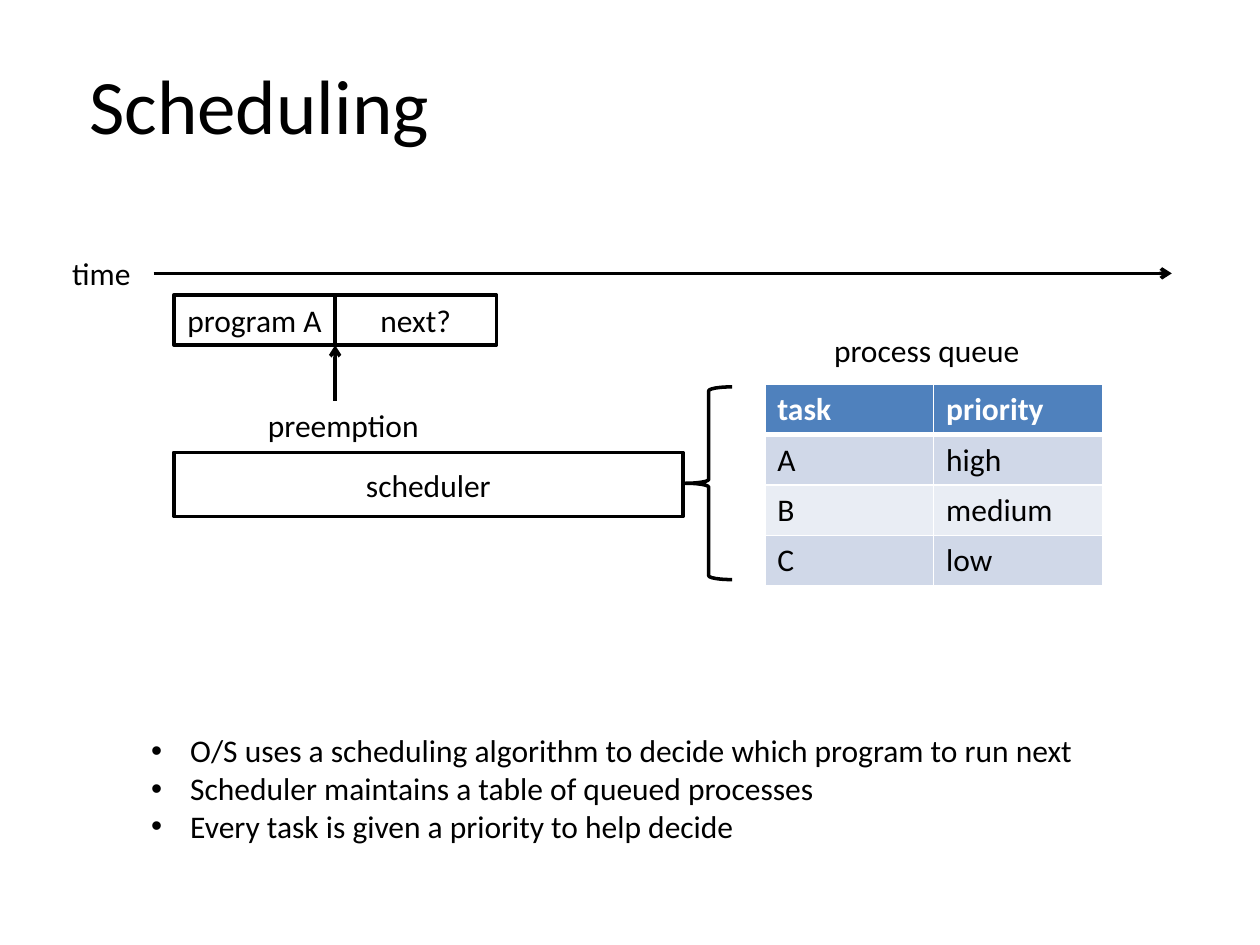
import lxml.etree
import pptx
import pptx.dml.color
import pptx.enum.shapes
import pptx.enum.text
import pptx.oxml.ns
import pptx.util

presentation = pptx.Presentation()
presentation.slide_width = pptx.util.Inches(10)
presentation.slide_height = pptx.util.Inches(7.5)
slide = presentation.slides.add_slide(presentation.slide_layouts[1])
shapes = slide.shapes
qn = pptx.oxml.ns.qn
SHAPE = pptx.enum.shapes.MSO_SHAPE
ALIGN = pptx.enum.text.PP_ALIGN
MIDDLE = pptx.enum.text.MSO_ANCHOR.MIDDLE
CELL = presentation.slide_width // 100  # the slide is 100 columns by 75 rows


def grid(*counts):
    """Turn counts of grid columns or rows into lengths."""
    return [round(count * CELL) for count in counts]


def write(frame, text, size=18, color="000000", align=ALIGN.LEFT, bold=False):
    frame.text = text
    frame.vertical_anchor = MIDDLE
    for paragraph in frame.paragraphs:
        paragraph.alignment = align
        paragraph.space_before = pptx.util.Pt(0)
        for run in paragraph.runs:
            run.font.name = "Calibri"
            run.font.size = pptx.util.Pt(size)
            run.font.bold = bold
            run.font.color.rgb = pptx.dml.color.RGBColor.from_string(color)


# Title and notes
title, notes = shapes.title, slide.placeholders[1]
title.left, title.top, title.width, title.height = grid(6.1, 4, 60, 8.4)
write(title.text_frame, "Scheduling", size=44)
notes.left, notes.top, notes.width, notes.height = grid(11, 57.5, 80, 10.1)
write(notes.text_frame, "\n".join([
    "O/S uses a scheduling algorithm to decide which program to run next",
    "Scheduler maintains a table of queued processes",
    "Every task is given a priority to help decide",
]))
for placeholder in (title, notes):
    placeholder.text_frame.auto_size = pptx.enum.text.MSO_AUTO_SIZE.NONE
for paragraph in notes.text_frame.paragraphs:
    properties = paragraph._p.get_or_add_pPr()
    indent = grid(3.1)[0]
    properties.set("marL", str(indent))
    properties.set("indent", str(-indent))

# Program boxes, scheduler and brace
BOX_LEFT, BOX_TOP, BOX_WIDTH, BOX_HEIGHT = 13.8, 23.4, 12.8, 4
SWITCH = BOX_LEFT + BOX_WIDTH  # where program A is preempted
for kind, text, *place in [
    (SHAPE.RECTANGLE, "program A", BOX_LEFT, BOX_TOP, BOX_WIDTH, BOX_HEIGHT),
    (SHAPE.RECTANGLE, "next?", SWITCH, BOX_TOP, BOX_WIDTH, BOX_HEIGHT),
    (SHAPE.RECTANGLE, "scheduler", BOX_LEFT, 35.9, 40.4, 5.1),
    (SHAPE.RIGHT_BRACE, "", 54.4, 30.7, 3.7, 15.3),
]:
    shape = shapes.add_shape(kind, *grid(*place))
    shape.shadow.inherit = False
    shape.fill.background()
    shape.line.color.rgb = pptx.dml.color.RGBColor.from_string("000000")
    shape.line.width = pptx.util.Pt(2)
    if kind == SHAPE.RIGHT_BRACE:
        shape.rotation = 180
    else:
        shape.text_frame.word_wrap = False
        write(shape.text_frame, text, align=ALIGN.CENTER)

# Labels
for text, *place in [
    ("time", 4.7, 19.7, 6.7, 4),
    ("preemption", 20.2, 31.7, 14.1, 4),
    ("process queue", 65.1, 25.8, 16.9, 4),
]:
    label = shapes.add_textbox(*grid(*place))
    label.text_frame.word_wrap = False
    write(label.text_frame, text, align=ALIGN.CENTER)

# Time axis and preemption arrow
for ends in [
    (12.2, 21.7, 93, 21.7),
    (SWITCH, 31.8, SWITCH, BOX_TOP + BOX_HEIGHT),
]:
    arrow = shapes.add_connector(
        pptx.enum.shapes.MSO_CONNECTOR.STRAIGHT, *grid(*ends))
    arrow.line.color.rgb = pptx.dml.color.RGBColor.from_string("000000")
    arrow.line.width = pptx.util.Pt(2)
    lxml.etree.SubElement(arrow.line._ln, qn("a:tailEnd"), type="arrow")
    lxml.etree.SubElement(arrow._element.spPr, qn("a:effectLst"))

# Process queue
rows = [("task", "priority"), ("A", "high"), ("B", "medium"), ("C", "low")]
table = shapes.add_table(len(rows), 2, *grid(60.7, 30.5, 26.8, 16)).table
for row_index, row in enumerate(rows):
    header = row_index == 0
    fill = "4F81BD" if header else ("E9EDF4", "D0D8E8")[row_index % 2]
    for column_index, text in enumerate(row):
        cell = table.cell(row_index, column_index)
        write(cell.text_frame, text, bold=header,
              color="FFFFFF" if header else "000000")
        properties = cell._tc.get_or_add_tcPr()
        for side in ("lnL", "lnR", "lnT", "lnB"):
            thick = (side, row_index) in [("lnB", 0), ("lnT", 1)]
            border = lxml.etree.SubElement(
                properties, qn("a:" + side),
                w=str(pptx.util.Pt(3 if thick else 1)))
            solid = lxml.etree.SubElement(border, qn("a:solidFill"))
            lxml.etree.SubElement(solid, qn("a:srgbClr"), val="FFFFFF")
        cell.fill.solid()
        cell.fill.fore_color.rgb = pptx.dml.color.RGBColor.from_string(fill)

presentation.save("out.pptx")
